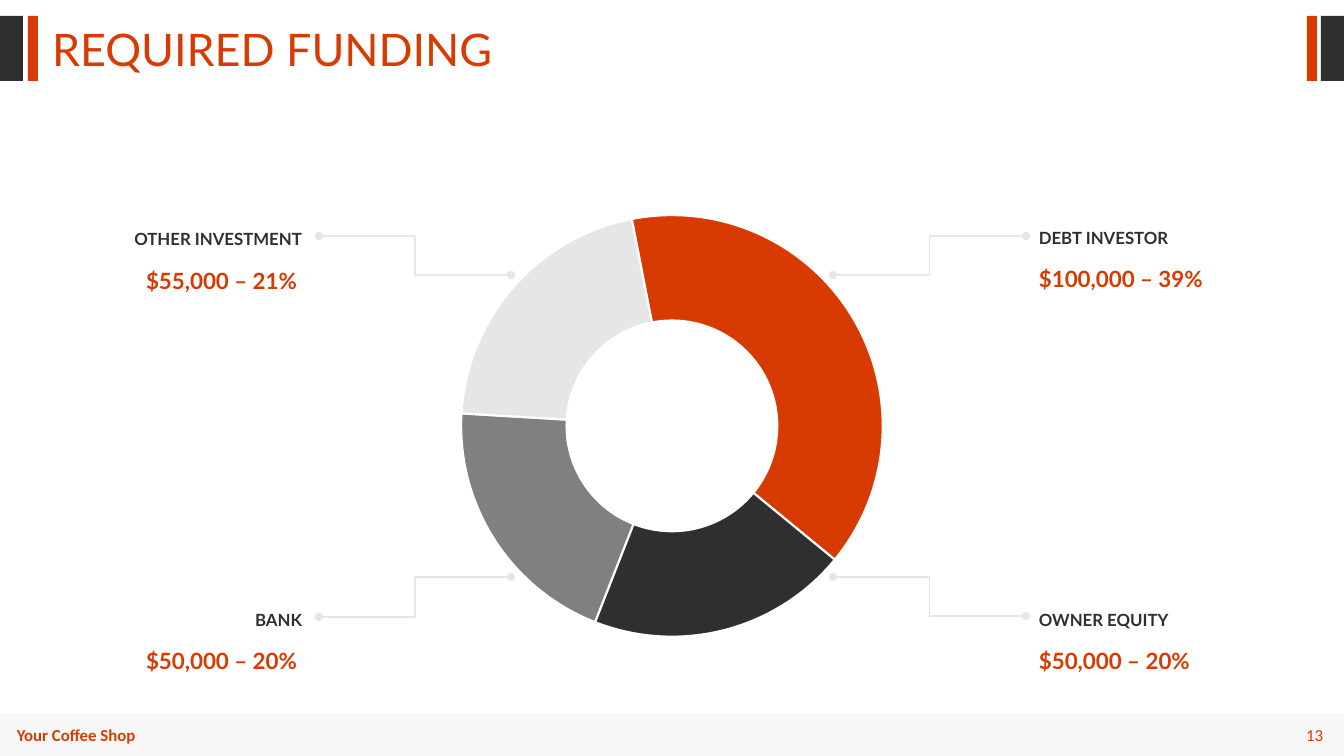
from lxml import etree
from pptx import Presentation
from pptx.chart.data import CategoryChartData
from pptx.dml.color import RGBColor
from pptx.enum.chart import XL_CHART_TYPE
from pptx.enum.shapes import MSO_CONNECTOR, MSO_SHAPE
from pptx.enum.text import MSO_ANCHOR, MSO_AUTO_SIZE, PP_ALIGN
from pptx.oxml import parse_xml
from pptx.oxml.ns import nsdecls, qn
from pptx.util import Pt

DOUGHNUT = XL_CHART_TYPE.DOUGHNUT
ELBOW = MSO_CONNECTOR.ELBOW
RECTANGLE = MSO_SHAPE.RECTANGLE
TOP, MIDDLE = MSO_ANCHOR.TOP, MSO_ANCHOR.MIDDLE
LEFT, RIGHT = PP_ALIGN.LEFT, PP_ALIGN.RIGHT

SLIDE_WIDTH, SLIDE_HEIGHT = 1344, 756
SCALE = 12192000 / SLIDE_WIDTH
COLORS = {
    "orange": "D83B01",
    "dark": "2F2F2F",
    "gray": "808080",
    "light": "E6E6E6",
    "white": "FFFFFF",
    "black": "000000",
}


def emu(*lengths):
    return [round(length * SCALE) for length in lengths]


def write_text(text, box, shape=None, size=12, font="Lato", color="orange",
               bold=False, align=LEFT, anchor=TOP, spacing=1.0):
    shape = shape or slide.shapes.add_textbox(*emu(*box))
    shape.left, shape.top, shape.width, shape.height = emu(*box)
    frame = shape.text_frame
    frame.text = text
    frame.word_wrap = True
    frame.auto_size = MSO_AUTO_SIZE.NONE
    frame.vertical_anchor = anchor
    paragraph = frame.paragraphs[0]
    paragraph.alignment = align
    paragraph.line_spacing = spacing
    paragraph.font.size = Pt(size)
    paragraph.font.name = font
    paragraph.font.bold = bold
    paragraph.font.color.rgb = RGBColor.from_string(COLORS[color])


presentation = Presentation()
presentation.slide_width, presentation.slide_height = emu(SLIDE_WIDTH, SLIDE_HEIGHT)
slide = presentation.slides.add_slide(presentation.slide_layouts[5])

# Title
write_text("REQUIRED FUNDING", (42, 27, 672, 54), shape=slide.shapes.title,
           size=32, spacing=0.8)

# Edge bars and footer band
bands = [
    (0, 16, 23, 65, "dark"),
    (28, 16, 10, 65, "orange"),
    (1307, 16, 10, 65, "orange"),
    (1321, 16, 23, 65, "dark"),
    (0, 714, SLIDE_WIDTH, 42, "light"),
]
for *box, color in bands:
    band = slide.shapes.add_shape(RECTANGLE, *emu(*box))
    band.shadow.inherit = False
    band.fill.solid()
    band.fill.fore_color.rgb = RGBColor.from_string(COLORS[color])
    band.line.fill.background()
footer_color = band.element.spPr.find(qn("a:solidFill"))[0]
etree.SubElement(footer_color, qn("a:alpha"), val="30000")

# Footer text
write_text("Your Coffee Shop", (7, 720, 185, 30), font="Calibri", bold=True)
write_text("13", (1245, 720, 88, 30), font="Calibri", align=RIGHT, anchor=MIDDLE)

# Funding doughnut
funding = CategoryChartData()
funding.categories = ["1", "2", "3", "4"]
funding.add_series("Series 1", (39, 20, 20, 21))
chart = slide.shapes.add_chart(DOUGHNUT, *emu(332, 199, 680, 454), funding).chart
chart.has_legend = False
chart.has_title = False
chart.font.size = Pt(10)
chart.font.name = "Calibri"
chart.font.color.rgb = RGBColor.from_string(COLORS["black"])
plot = chart.plots[0]
plot.vary_by_categories = True
for index, color in enumerate(("orange", "dark", "gray", "light")):
    slice_format = plot.series[0].points[index].format
    slice_format.fill.solid()
    slice_format.fill.fore_color.rgb = RGBColor.from_string(COLORS[color])
    slice_format.line.color.rgb = RGBColor.from_string(COLORS["white"])
    slice_format.line.width = Pt(1.5)

# Doughnut rotation, hole and plot area
chart_space = chart.element
chart_space.find(".//" + qn("c:firstSliceAng")).set("val", "349")
chart_space.find(".//" + qn("c:holeSize")).set("val", "64")
plot_area = chart_space.find(".//" + qn("c:plotArea"))
for layout in plot_area.findall(qn("c:layout")):
    plot_area.remove(layout)
plot_area.insert(0, parse_xml(
    f'<c:layout {nsdecls("c")}><c:manualLayout><c:layoutTarget val="inner"/>'
    '<c:xMode val="edge"/><c:yMode val="edge"/><c:x val="0.19"/><c:y val="0.03"/>'
    '<c:w val="0.62"/><c:h val="0.94"/></c:manualLayout></c:layout>'))

# Callouts: name, amount, alignment, name top, amount top, line start and end heights
callouts = [
    ("OTHER INVESTMENT", "$55,000 – 21%", RIGHT, 220, 257, 275, 236),
    ("BANK", "$50,000 – 20%", RIGHT, 601, 637, 577, 617),
    ("DEBT INVESTOR", "$100,000 – 39%", LEFT, 219, 255, 275, 236),
    ("OWNER EQUITY", "$50,000 – 20%", LEFT, 601, 637, 577, 616),
]
for name, amount, align, name_top, amount_top, start_y, end_y in callouts:
    if align == RIGHT:
        name_left, name_width, amount_left, start_x, end_x = 104, 208, 0, 511, 319
    else:
        name_left, name_width, amount_left, start_x, end_x = 1029, 312, 1029, 833, 1026
    write_text(amount, (amount_left, amount_top, 307, 39), size=16, bold=True,
               align=align, spacing=1.2)
    write_text(name, (name_left, name_top, name_width, 32), color="dark", bold=True,
               align=align, spacing=1.2)
    connector = slide.shapes.add_connector(ELBOW, *emu(start_x, start_y, end_x, end_y))
    connector.line.color.rgb = RGBColor.from_string(COLORS["light"])
    connector.line.width = Pt(1)
    properties = connector.element.spPr
    for end in ("a:headEnd", "a:tailEnd"):
        etree.SubElement(properties.find(qn("a:ln")), qn(end), type="oval")
    etree.SubElement(properties, qn("a:effectLst"))

presentation.save("out.pptx")
